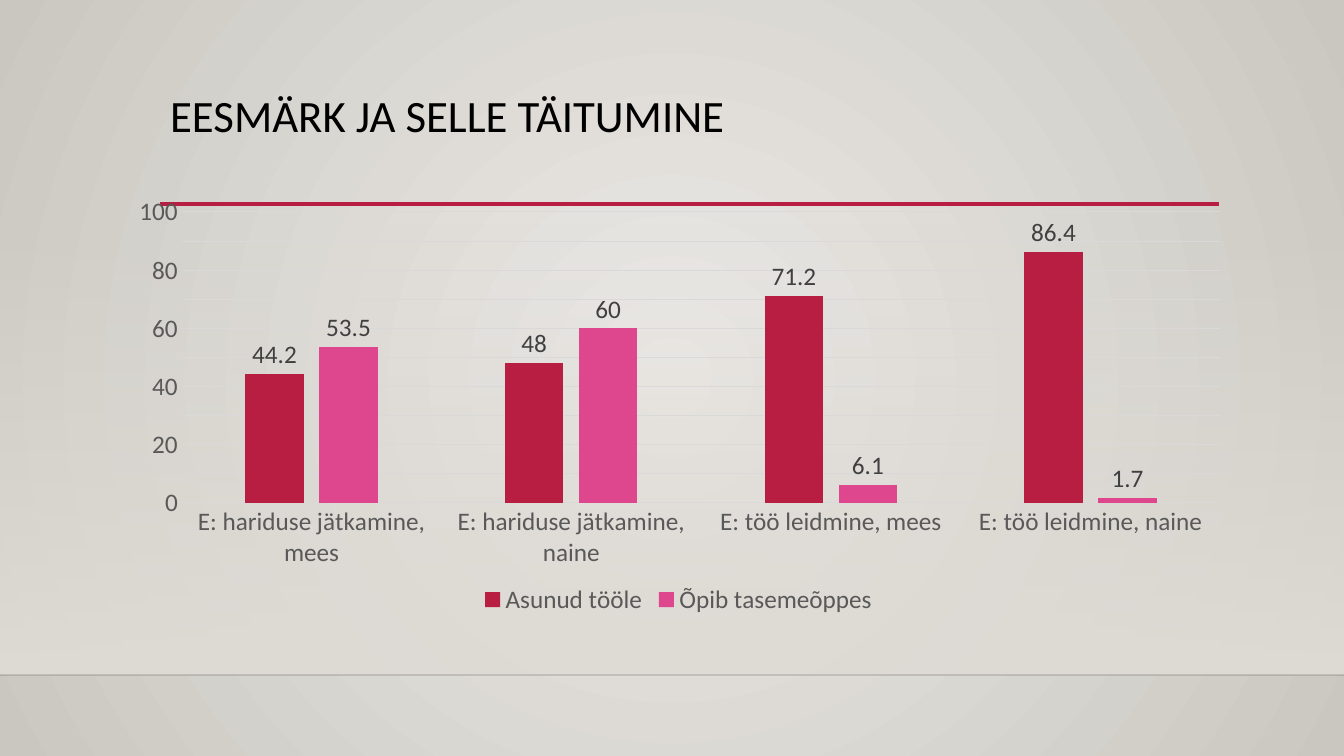
from lxml import etree
from pptx import Presentation
from pptx.chart.data import CategoryChartData
from pptx.dml.color import RGBColor
from pptx.enum.chart import XL_CHART_TYPE, XL_LABEL_POSITION, XL_LEGEND_POSITION, XL_TICK_MARK
from pptx.enum.shapes import MSO_CONNECTOR, MSO_SHAPE
from pptx.enum.text import MSO_ANCHOR, MSO_AUTO_SIZE, PP_ALIGN
from pptx.oxml import parse_xml
from pptx.oxml.ns import nsdecls, qn
from pptx.util import Pt

COLUMNS = XL_CHART_TYPE.COLUMN_CLUSTERED
OUTSIDE = XL_LABEL_POSITION.OUTSIDE_END
BOTTOM = XL_LEGEND_POSITION.BOTTOM
NO_TICK = XL_TICK_MARK.NONE
RECT = MSO_SHAPE.RECTANGLE
STRAIGHT = MSO_CONNECTOR.STRAIGHT
TOP = MSO_ANCHOR.TOP
FIXED = MSO_AUTO_SIZE.NONE
LEFT = PP_ALIGN.LEFT

PX = 12192000 / 1344
RED, PINK, GREY, PALE = "B71E42", "DE478E", "595959", "D9D9D9"


def paint(color, ink):
    color.rgb = RGBColor.from_string(ink)


def write(part, text="", size=18, ink=GREY):
    if text:
        part.text = text
    part.font.name = "Calibri"
    part.font.size = Pt(size)
    paint(part.font.color, ink)


deck = Presentation()
deck.slide_width, deck.slide_height = round(1344 * PX), round(756 * PX)
slide = deck.slides.add_slide(deck.slide_layouts[5])
shapes = slide.shapes

# Background: radial gradient
back = slide.background.fill
back.gradient()
for stop, ink in zip(back.gradient_stops, ("ECEAE7", "CAC7C1")):
    paint(stop.color, ink)
grad = slide.element.find(".//" + qn("a:gradFill"))
grad.replace(grad.find(qn("a:lin")), parse_xml(
    f'<a:path {nsdecls("a")} path="circle">'
    '<a:fillToRect l="50000" t="50000" r="50000" b="50000"/></a:path>'))

# Wall that fades in towards the floor
wall = shapes.add_shape(RECT, 0, round(223 * PX), deck.slide_width, round(452 * PX))
wall.shadow.inherit = False
wall.line.fill.background()
wall.fill.gradient()
wall.fill.gradient_angle = 270
for stop in wall.fill.gradient_stops:
    paint(stop.color, "DFDBD5")
clear = wall.element.find(".//" + qn("a:srgbClr"))
etree.SubElement(clear, qn("a:alpha"), val="0")

# Floor line and title rule
for left, right, y, ink, width, alpha in (
        (0, 1344, 675, "000001", 1, 20), (160, 1219, 204, RED, 2.5, 100)):
    rule = shapes.add_connector(STRAIGHT, *(round(n * PX) for n in (left, y, right, y)))
    rule.line.width = Pt(width)
    paint(rule.line.color, ink)
    tint = rule.element.find(".//" + qn("a:srgbClr"))
    etree.SubElement(tint, qn("a:alpha"), val=str(alpha * 1000))
    etree.SubElement(rule.element.spPr, qn("a:effectLst"))

# Title
title = shapes.title
title.left, title.top, title.width, title.height = (
    round(n * PX) for n in (160, 89, 1058, 116))
frame = title.text_frame
frame.word_wrap = True
frame.auto_size = FIXED
frame.vertical_anchor = TOP
line = frame.paragraphs[0]
line.alignment = LEFT
line.line_spacing = 0.9
write(line.add_run(), "EESMÄRK JA SELLE TÄITUMINE", size=32, ink="000000")

# Chart
data = CategoryChartData()
data.categories = ["E: hariduse jätkamine, mees", "E: hariduse jätkamine, naine",
                   "E: töö leidmine, mees", "E: töö leidmine, naine"]
data.add_series("Asunud tööle", (44.2, 48, 71.2, 86.4))
data.add_series("Õpib tasemeõppes", (53.5, 60, 6.1, 1.7))
chart = shapes.add_chart(
    COLUMNS, *(round(n * PX) for n in (114, 186, 1129, 434)), data).chart
write(chart, ink="000000")
chart.has_title = False
chart.has_legend = True
chart.legend.position = BOTTOM
chart.legend.include_in_layout = False
write(chart.legend)

# Columns and their labels
plot = chart.plots[0]
plot.gap_width, plot.overlap = 219, -27
plot.vary_by_categories = False
for series, ink in zip(plot.series, (RED, PINK)):
    series.format.fill.solid()
    paint(series.format.fill.fore_color, ink)
    labels = series.data_labels
    labels.show_value = True
    labels.position = OUTSIDE
    write(labels, ink="404040")

# Axes
cats, vals = chart.category_axis, chart.value_axis
for axis in (cats, vals):
    axis.major_tick_mark = axis.minor_tick_mark = NO_TICK
    write(axis.tick_labels)
vals.minimum_scale, vals.maximum_scale, vals.major_unit = 0, 100, 10
vals.format.line.fill.background()
for part in (cats, vals.major_gridlines):
    part.format.line.width = Pt(0.75)
    paint(part.format.line.color, PALE)

# Plot area inside the chart frame
area = chart.element.find(".//" + qn("c:plotArea"))
for old in area.findall(qn("c:layout")):
    area.remove(old)
layout = etree.Element(qn("c:layout"))
area.insert(0, layout)
manual = etree.SubElement(layout, qn("c:manualLayout"))
for tag, val in (("layoutTarget", "inner"), ("xMode", "edge"), ("yMode", "edge"),
                 ("x", "0.06"), ("y", "0.06"), ("w", "0.92"), ("h", "0.67")):
    etree.SubElement(manual, qn("c:" + tag), val=val)

deck.save("out.pptx")
